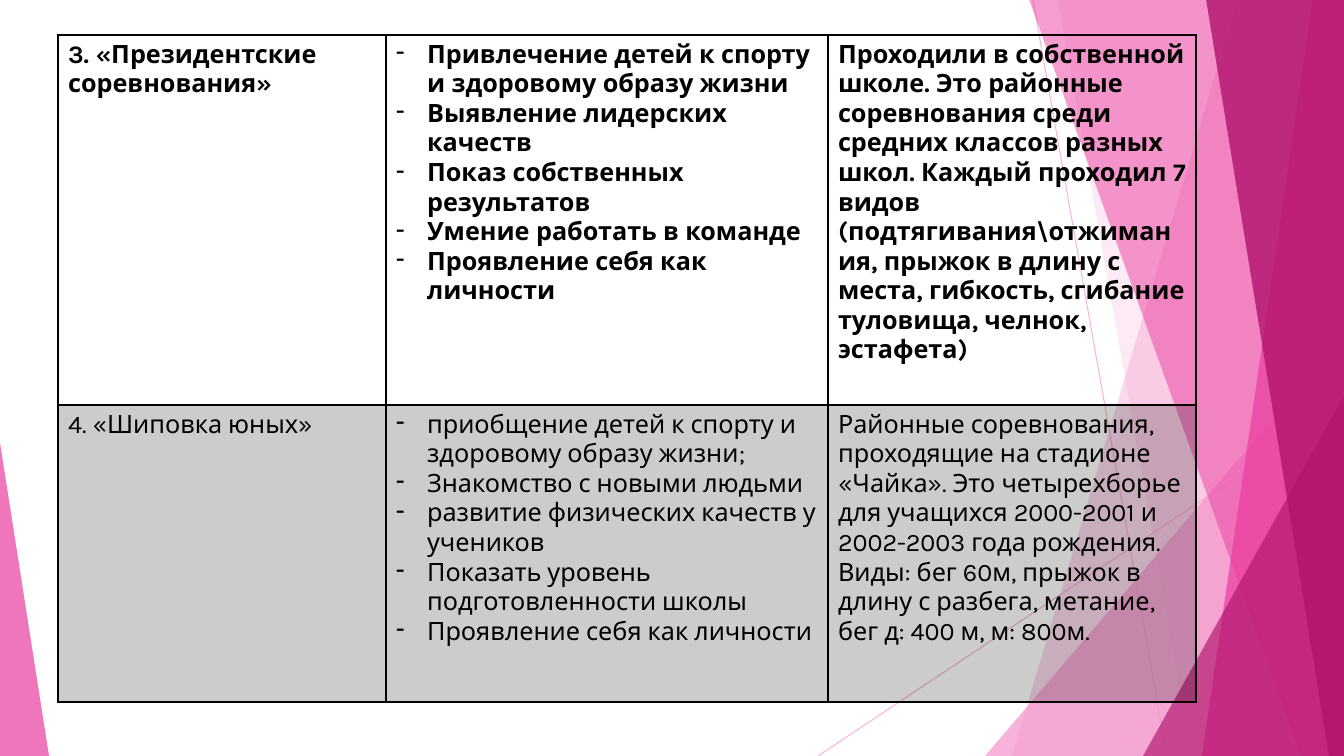
from lxml import etree
from pptx import Presentation
from pptx.dml.color import RGBColor
from pptx.enum.shapes import MSO_CONNECTOR, MSO_SHAPE
from pptx.oxml.ns import qn
from pptx.util import Emu, Pt

STRAIGHT = MSO_CONNECTOR.STRAIGHT
TRIANGLE = MSO_SHAPE.ISOSCELES_TRIANGLE

BLACK = RGBColor(0x00, 0x00, 0x00)
LIGHT_PINK = RGBColor(0xF4, 0x96, 0xCB)
PINK = RGBColor(0xEB, 0x3D, 0x9F)
MAGENTA = RGBColor(0xB2, 0x13, 0x6D)

SLIDE_W, SLIDE_H = 1344, 756
EMU_PER_PX = 12192000 / SLIDE_W
TABLE_BOX = (58, 35, 1138, 667)
COLUMNS = (328, 442, 368)
ROWS = (370, 297)
INDENT = 31

# Each row: name, list of aims, paragraphs of description
EVENTS = [
    ("3. «Президентские соревнования»",
     ["Привлечение детей к спорту и здоровому образу жизни",
      "Выявление лидерских качеств",
      "Показ собственных результатов",
      "Умение работать в команде",
      "Проявление себя как личности"],
     ["Проходили в собственной школе. Это районные соревнования среди средних "
      "классов разных школ. Каждый проходил 7 видов (подтягивания\\отжимания, "
      "прыжок в длину с места, гибкость, сгибание туловища, челнок, эстафета)"]),
    ("4. «Шиповка юных»",
     ["приобщение детей к спорту и здоровому образу жизни;",
      "Знакомство с новыми людьми",
      "развитие физических качеств у учеников",
      "Показать уровень подготовленности школы",
      "Проявление себя как личности"],
     ["Районные соревнования, проходящие на стадионе «Чайка». Это четырехборье "
      "для учащихся 2000-2001 и 2002-2003 года рождения.",
      "Виды: бег 60м, прыжок в длину с разбега, метание, бег д: 400 м, м: 800м."]),
]


def px(value):
    return Emu(round(value * EMU_PER_PX))


def paint(fill, color, opacity):
    """Solid fill with the given opacity in percent."""
    fill.solid()
    fill.fore_color.rgb = color


def set_opacity(element, percent):
    color = next(element.iter(qn("a:srgbClr")))
    etree.SubElement(color, qn("a:alpha"), val=str(percent * 1000))


def finish(sp, color, opacity):
    sp.shadow.inherit = False
    sp.fill.solid()
    sp.fill.fore_color.rgb = color
    set_opacity(sp.fill._xPr, opacity)
    sp.line.fill.background()


def add_ray(slide, x1, y1, x2, y2):
    ray = slide.shapes.add_connector(STRAIGHT, px(x1), px(y1), px(x2), px(y2))
    ray.line.color.rgb = LIGHT_PINK
    ray.line.width = Pt(0.75)
    sp_pr = ray._element.spPr
    set_opacity(sp_pr, 70)
    etree.SubElement(sp_pr, qn("a:effectLst"))


def add_band(slide, top_x, bottom_x, color, opacity):
    """Slanted left edge, filled out to the right side of the slide."""
    points = [(SLIDE_W, -1), (SLIDE_W, SLIDE_H), (bottom_x, SLIDE_H)]
    builder = slide.shapes.build_freeform(px(top_x), px(-1))
    builder.add_line_segments([(px(x), px(y)) for x, y in points], close=True)
    finish(builder.convert_to_shape(), color, opacity)


def add_corner(slide, x, y, w, apex, color, opacity):
    """Triangle standing on the bottom of the slide."""
    sp = slide.shapes.add_shape(TRIANGLE, px(x), px(y), px(w), px(SLIDE_H - y))
    sp.adjustments[0] = apex
    finish(sp, color, opacity)


def add_facets(slide):
    # Thin rays
    add_ray(slide, 1033, 0, 1167, SLIDE_H)
    add_ray(slide, SLIDE_W, 406, 818, SLIDE_H)
    # Overlapping facets, back to front
    add_band(slide, 1238, 1012, LIGHT_PINK, 36)
    add_band(slide, 1058, 1192, LIGHT_PINK, 20)
    add_corner(slide, 985, 336, 359, 1, LIGHT_PINK, 72)
    add_band(slide, 1029, 1301, PINK, 50)
    add_band(slide, 1313, 1202, PINK, 70)
    add_band(slide, 1206, 1329, MAGENTA, 80)
    add_corner(slide, 1143, 396, 201, 1, MAGENTA, 66)
    add_corner(slide, 0, 443, 49, 0, PINK, 70)


def set_borders(cell, widths):
    tc_pr = cell._tc.get_or_add_tcPr()
    for i, (side, width) in enumerate(widths.items()):
        ln = etree.Element(qn(f"a:ln{side}"), w=str(Pt(width)))
        fill = etree.SubElement(ln, qn("a:solidFill"))
        etree.SubElement(fill, qn("a:srgbClr"), val=str(BLACK))
        tc_pr.insert(i, ln)


def write_cell(cell, paragraphs, bold, dashed):
    font = {"name": "Karla", "size": Pt(18), "bold": bold}
    tf = cell.text_frame
    for i, text in enumerate(paragraphs):
        p = tf.paragraphs[0] if i == 0 else tf.add_paragraph()
        r = p.add_run()
        r.text = text
        for name, value in font.items():
            setattr(r.font, name, value)
        r.font.color.rgb = BLACK
        if dashed:
            p_pr = p._p.get_or_add_pPr()
            p_pr.set("marL", str(px(INDENT)))
            p_pr.set("indent", str(-px(INDENT)))
            etree.SubElement(p_pr, qn("a:buChar"), char="-")


def add_events_table(slide, box):
    frame = slide.shapes.add_table(len(ROWS), len(COLUMNS), *map(px, box))
    table = frame.table
    table.first_row = table.horz_banding = False
    for column, width in zip(table.columns, COLUMNS):
        column.width = px(width)
    for row, height in zip(table.rows, ROWS):
        row.height = px(height)

    for i, (name, aims, description) in enumerate(EVENTS):
        heading = i == 0
        for j, paragraphs in enumerate(([name], aims, description)):
            cell = table.cell(i, j)
            write_cell(cell, paragraphs, bold=heading, dashed=j == 1)
            if heading:
                cell.fill.background()
            else:
                cell.fill.solid()
                cell.fill.fore_color.rgb = BLACK
                set_opacity(cell._tc.tcPr, 20)
            # Heavy rule between the two rows
            set_borders(cell, {"L": 1, "R": 1, "T": 1 if heading else 2,
                               "B": 2 if heading else 1})


def main():
    prs = Presentation()
    prs.slide_width, prs.slide_height = px(SLIDE_W), px(SLIDE_H)
    slide = prs.slides.add_slide(prs.slide_layouts[6])
    add_facets(slide)
    add_events_table(slide, TABLE_BOX)
    prs.save("out.pptx")


if __name__ == "__main__":
    main()
